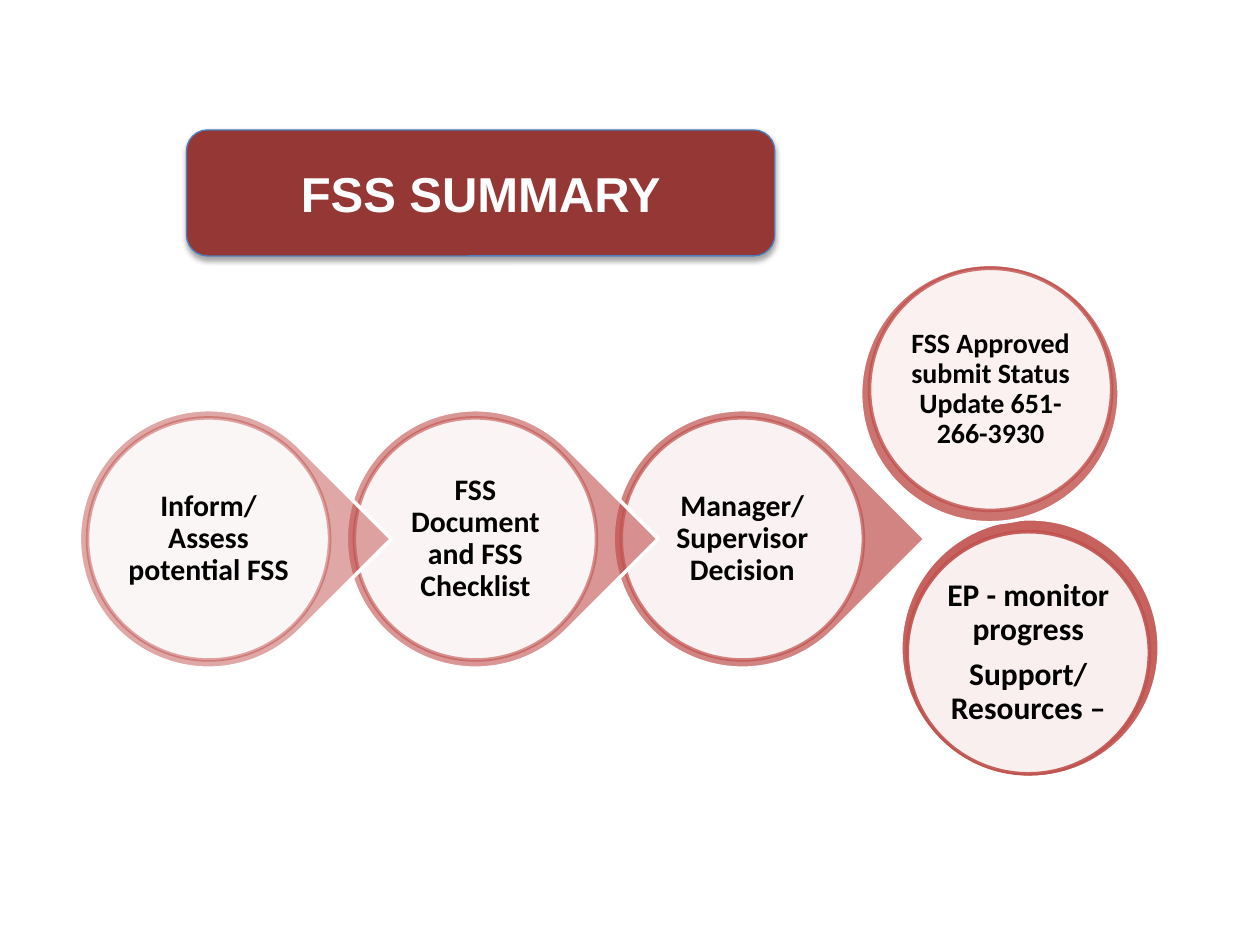
import pptx
import pptx.util
import pptx.dml.color
import pptx.enum.shapes
import pptx.enum.text
import pptx.oxml
import pptx.oxml.ns
import lxml.etree

Cm, Pt = pptx.util.Cm, pptx.util.Pt
SHAPES = pptx.enum.shapes.MSO_SHAPE
ALIGN = pptx.enum.text.PP_ALIGN
ANCHOR = pptx.enum.text.MSO_ANCHOR

RED, WHITE = "C0504D", "FFFFFF"
RING, DISC, LABEL = 5.21, 4.88, 3.48
STEP_LEFT, STEP_TOP, STEP_PITCH = 1.6, 8.26, 5.38

TITLE = "FSS SUMMARY"
STEPS = [
    ["Inform/ Assess potential FSS"],
    ["FSS Document and FSS Checklist"],
    ["Manager/ Supervisor Decision"],
]
OUTCOMES = [
    {"lines": ["FSS Approved submit Status Update 651-266-3930"], "size": 16,
     "ring": (17.35, 5.33), "disc": (17.53, 5.41)},
    {"lines": ["EP - monitor progress", "Support/ Resources –"], "size": 18,
     "ring": (18.16, 10.46), "disc": (18.29, 10.72)},
]
LABEL_FRAME = {
    "word_wrap": True, "vertical_anchor": ANCHOR.MIDDLE,
    "margin_left": Cm(0.06), "margin_right": Cm(0.06),
    "margin_top": Cm(0.06), "margin_bottom": Cm(0.06),
}
TITLE_FRAME = {"word_wrap": True, "vertical_anchor": ANCHOR.MIDDLE}
TITLE_SHADOW = """<a:effectLst %s><a:outerShdw blurRad="39370" dist="22860" dir="5400000"
rotWithShape="0"><a:srgbClr val="000000"><a:alpha val="35000"/></a:srgbClr>
</a:outerShdw></a:effectLst>""" % pptx.oxml.ns.nsdecls("a")


def apply(target, values):
    for name, value in values.items():
        setattr(target, name, value)


def paint(fill, color, opacity=100):
    fill.solid()
    fill.fore_color.rgb = pptx.dml.color.RGBColor.from_string(color)
    if opacity < 100:
        tone = fill._xPr.find(".//" + pptx.oxml.ns.qn("a:srgbClr"))
        alpha = lxml.etree.SubElement(tone, pptx.oxml.ns.qn("a:alpha"))
        alpha.set("val", str(opacity * 1000))


def add_outline(slide, kind, box, fill, line, width):
    outline = slide.shapes.add_shape(kind, *map(Cm, box))
    outline.shadow.inherit = False
    paint(outline.fill, *fill)
    paint(outline.line.fill, *line)
    outline.line.width = Pt(width)
    return outline


def write(frame, lines, frame_format, paragraph_format, font_format, color):
    apply(frame, frame_format)
    for index, line in enumerate(lines):
        paragraph = frame.paragraphs[0] if index == 0 else frame.add_paragraph()
        paragraph.text = line
        apply(paragraph, paragraph_format)
        apply(paragraph.font, font_format)
        paint(paragraph.font.fill, color)


def add_stage(slide, kind, ring_at, disc_at, opacity, lines, size):
    ring = add_outline(slide, kind, (*ring_at, RING, RING), (RED, opacity), (WHITE,), 2)
    if kind == SHAPES.TEAR:
        ring.adjustments[0] = 1
        ring.rotation = 45
    add_outline(slide, SHAPES.OVAL, (*disc_at, DISC, DISC), (WHITE, 90), (RED, opacity), 2)
    inset = (DISC - LABEL) / 2
    label = slide.shapes.add_textbox(
        *(Cm(start + inset) for start in disc_at), Cm(LABEL), Cm(LABEL))
    spacing = {"alignment": ALIGN.CENTER, "line_spacing": 0.9, "space_after": Pt(size * 0.35)}
    font = {"name": "Calibri", "size": Pt(size), "bold": True}
    write(label.text_frame, lines, LABEL_FRAME, spacing, font, "000000")


def main():
    deck = pptx.Presentation()
    deck.slide_width, deck.slide_height = Cm(25.4), Cm(19.05)
    slide = deck.slides.add_slide(deck.slide_layouts[6])

    banner = add_outline(slide, SHAPES.ROUNDED_RECTANGLE, (3.76, 2.62, 11.86, 2.54),
                         ("953735",), ("4B7EBC",), 0.75)
    properties = banner._element.spPr
    properties.remove(properties.find(pptx.oxml.ns.qn("a:effectLst")))
    properties.append(pptx.oxml.parse_xml(TITLE_SHADOW))
    write(banner.text_frame, [TITLE], TITLE_FRAME, {"alignment": ALIGN.CENTER},
          {"name": "Arial", "size": Pt(28), "bold": True}, WHITE)

    for index, outcome in reversed(list(enumerate(OUTCOMES))):
        add_stage(slide, SHAPES.OVAL, outcome["ring"], outcome["disc"],
                  80 + 10 * index, outcome["lines"], outcome["size"])

    rim = (RING - DISC) / 2
    for index, lines in reversed(list(enumerate(STEPS))):
        left = STEP_LEFT + index * STEP_PITCH
        add_stage(slide, SHAPES.TEAR, (left, STEP_TOP), (left + rim, STEP_TOP + rim),
                  50 + 10 * index, lines, 17)

    deck.save("out.pptx")


if __name__ == "__main__":
    main()
